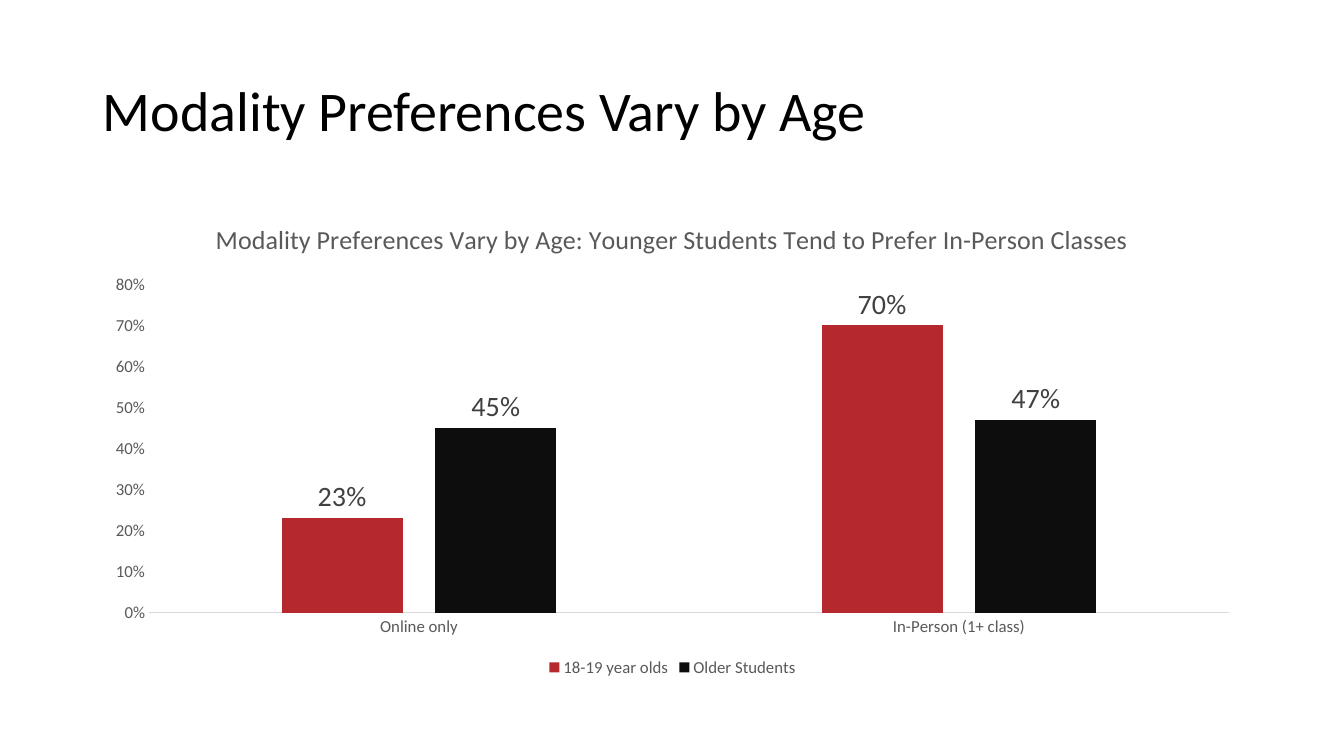
from pptx import Presentation
from pptx.chart.data import CategoryChartData
from pptx.dml.color import RGBColor
from pptx.enum.chart import (XL_CHART_TYPE, XL_LABEL_POSITION,
                             XL_LEGEND_POSITION, XL_TICK_MARK)
from pptx.enum.text import MSO_ANCHOR, MSO_AUTO_SIZE, PP_ALIGN
from pptx.util import Inches, Pt

COLUMNS = XL_CHART_TYPE.COLUMN_CLUSTERED
OUTSIDE = XL_LABEL_POSITION.OUTSIDE_END
BOTTOM = XL_LEGEND_POSITION.BOTTOM
NO_TICK = XL_TICK_MARK.NONE
MIDDLE = MSO_ANCHOR.MIDDLE
NO_FIT = MSO_AUTO_SIZE.NONE
LEFT = PP_ALIGN.LEFT

BLACK = RGBColor(0x00, 0x00, 0x00)
RED = RGBColor(0xB5, 0x29, 0x2E)
INK = RGBColor(0x0D, 0x0D, 0x0D)
DARK = RGBColor(0x40, 0x40, 0x40)
GREY = RGBColor(0x59, 0x59, 0x59)
PALE = RGBColor(0xD9, 0xD9, 0xD9)

GROUPS = ["Online only", "In-Person (1+ class)"]
AGES = [("18-19 year olds", (0.23, 0.70), RED),
        ("Older Students", (0.45, 0.47), INK)]


def assign(target, **values):
    for name, value in values.items():
        setattr(target, name, value)


class Deck:
    """Holds the text style and the current slide."""

    face = "Calibri"

    def __init__(self, width, height):
        self.prs = Presentation()
        assign(self.prs, slide_width=Inches(width), slide_height=Inches(height))
        self.slide = self.prs.slides.add_slide(self.prs.slide_layouts[5])

    def style(self, font, size, color):
        assign(font, name=self.face, size=Pt(size), bold=False)
        font.color.rgb = color

    def title(self, text, left, top, width, height):
        shape = self.slide.shapes.title
        assign(shape, left=Inches(left), top=Inches(top),
               width=Inches(width), height=Inches(height))
        frame = shape.text_frame
        assign(frame, text=text, vertical_anchor=MIDDLE,
               word_wrap=True, auto_size=NO_FIT)
        para = frame.paragraphs[0]
        assign(para, alignment=LEFT, line_spacing=0.9)
        self.style(para.runs[0].font, 40, BLACK)

    def columns(self, heading, groups, rows, left, top, width, height):
        data = CategoryChartData(number_format="0%")
        data.categories = groups
        for name, values, _ in rows:
            data.add_series(name, values)
        chart = self.slide.shapes.add_chart(
            COLUMNS, Inches(left), Inches(top),
            Inches(width), Inches(height), data).chart
        self.style(chart.font, 10, BLACK)

        # Heading and legend
        frame = chart.chart_title.text_frame
        frame.text = heading
        self.style(frame.paragraphs[0].runs[0].font, 18.6, GREY)
        chart.chart_title.include_in_layout = False
        chart.has_legend = True
        assign(chart.legend, position=BOTTOM, include_in_layout=False)
        self.style(chart.legend.font, 12, GREY)

        # Axes
        for axis in (chart.category_axis, chart.value_axis):
            assign(axis, has_major_gridlines=False,
                   major_tick_mark=NO_TICK, minor_tick_mark=NO_TICK)
            self.style(axis.tick_labels.font, 12, GREY)
        base = chart.category_axis.format.line
        base.width = Pt(0.75)
        base.color.rgb = PALE
        scale = chart.value_axis
        assign(scale, minimum_scale=0, maximum_scale=0.8, major_unit=0.1)
        assign(scale.tick_labels, number_format="0%",
               number_format_is_linked=False)
        scale.format.line.fill.background()

        # Bars and their values
        plot = chart.plots[0]
        assign(plot, gap_width=219, overlap=-27, vary_by_categories=False)
        for bars, (_, _, color) in zip(plot.series, rows):
            bars.format.fill.solid()
            bars.format.fill.fore_color.rgb = color
            labels = bars.data_labels
            assign(labels, show_value=True, position=OUTSIDE,
                   number_format="0%", number_format_is_linked=False)
            self.style(labels.font, 20, DARK)

    def save(self):
        self.prs.save("out.pptx")


def main():
    deck = Deck(13.33, 7.5)
    deck.title("Modality Preferences Vary by Age", 0.92, 0.4, 11.5, 1.45)
    deck.columns("Modality Preferences Vary by Age: "
                 "Younger Students Tend to Prefer In-Person Classes",
                 GROUPS, AGES, 0.92, 2, 11.5, 4.76)
    deck.save()


if __name__ == "__main__":
    main()
